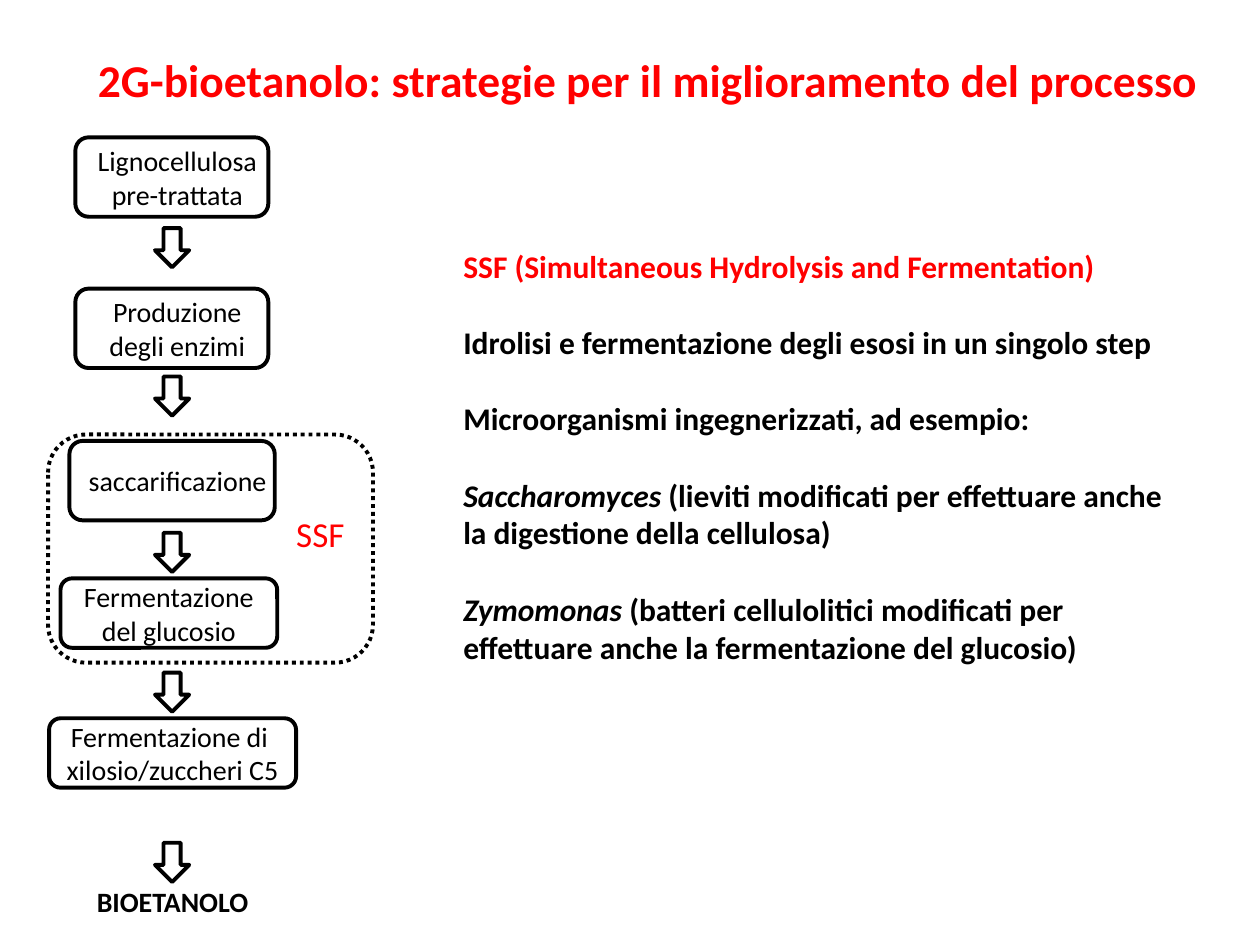
from pptx import Presentation
from pptx.util import Cm, Pt
from pptx.dml.color import RGBColor as RGB
from pptx.enum.dml import MSO_LINE as Dash
from pptx.enum.shapes import MSO_SHAPE as Kind
from pptx.enum.text import MSO_ANCHOR as Anchor, PP_ALIGN as Align

HUES = {"ink": "000000", "red": "FF0000", "paper": "FFFFFF"}
FONT = "Calibri"
AXIS = 3.47

STEPS = [
    ("Lignocellulosa\npre-trattata", 1.52, 2.77, 3.89, 1.6, 0.03),
    ("Produzione degli enzimi", 1.52, 5.82, 3.89, 1.6, 0.03),
    ("saccarificazione", 1.4, 8.89, 4.14, 1.6, 0.03),
    ("Fermentazione del glucosio", 1.22, 11.66, 4.37, 1.4, 0.25),
    ("Fermentazione di \nxilosio/zuccheri C5", 0.99, 14.48, 4.98, 1.4, 0.25),
]
ARROWS = [4.6, 7.59, 10.74, 13.56, 16.99]
NOTES = [
    ("", "SSF (Simultaneous Hydrolysis and Fermentation)", "red", Align.JUSTIFY),
    ("", "Idrolisi e fermentazione degli esosi in un singolo step", "ink", Align.JUSTIFY),
    ("", "Microorganismi ingegnerizzati, ad esempio:", "ink", Align.LEFT),
    ("Saccharomyces ", "(lieviti modificati per effettuare anche "
     "la digestione della cellulosa)", "ink", Align.LEFT),
    ("Zymomonas ", "(batteri cellulolitici modificati per "
     "effettuare anche la fermentazione del glucosio)", "ink", Align.LEFT),
]


def hue(name):
    return RGB.from_string(HUES[name])


def style(para, size, color="ink", bold=False, align=Align.CENTER):
    para.alignment = align
    font = para.font
    font.name, font.size, font.bold = FONT, Pt(size), bold
    font.color.rgb = hue(color)


def add_form(slide, kind, left, top, width, height, fill=None):
    form = slide.shapes.add_shape(kind, Cm(left), Cm(top), Cm(width), Cm(height))
    form.shadow.inherit = False
    if fill:
        form.fill.solid()
        form.fill.fore_color.rgb = hue(fill)
    else:
        form.fill.background()
    form.line.color.rgb = hue("ink")
    form.line.width = Pt(2.25)
    return form


def add_step(slide, text, left, top, width, height, right):
    frame = add_form(slide, Kind.ROUNDED_RECTANGLE, left, top, width, height).text_frame
    frame.word_wrap = True
    frame.vertical_anchor = Anchor.MIDDLE
    frame.margin_left, frame.margin_right = Cm(0.25), Cm(right)
    frame.margin_top = frame.margin_bottom = Cm(0.03)
    frame.text = text
    for para in frame.paragraphs:
        style(para, 16)


def add_arrow(slide, top):
    width = 0.69
    add_form(slide, Kind.DOWN_ARROW, AXIS - width / 2, top, width, 0.79, "paper")


def add_box(slide, left, top, width, height):
    box = slide.shapes.add_textbox(Cm(left), Cm(top), Cm(width), Cm(height))
    box.text_frame.word_wrap = True
    return box.text_frame


def add_label(slide, text, area, size, color="ink", bold=False):
    frame = add_box(slide, *area)
    frame.vertical_anchor = Anchor.MIDDLE
    frame.text = text
    style(frame.paragraphs[0], size, color, bold)


def add_notes(slide):
    frame = add_box(slide, 9.09, 4.85, 15.14, 8.71)
    for rank, (genus, text, color, align) in enumerate(NOTES):
        para = frame.add_paragraph() if rank else frame.paragraphs[0]
        style(para, 18, color, True, align)
        if rank:
            para.space_before = Pt(22)
        if genus:
            run = para.add_run()
            run.text = genus
            run.font.italic = True
        para.add_run().text = text


def main():
    deck = Presentation()
    deck.slide_width, deck.slide_height = Cm(25.4), Cm(19.05)
    slide = deck.slides.add_slide(deck.slide_layouts[6])
    add_label(slide, "2G-bioetanolo: strategie per il miglioramento del processo",
              (0.99, 0.91, 24.16, 1.37), 26, "red", True)
    for step in STEPS:
        add_step(slide, *step)
    for top in ARROWS:
        add_arrow(slide, top)
    add_label(slide, "BIOETANOLO", (1.27, 17.58, 4.42, 1.19), 16, bold=True)
    group = add_form(slide, Kind.ROUNDED_RECTANGLE, 0.97, 8.76, 6.55, 4.6)
    group.line.dash_style = Dash.ROUND_DOT
    add_label(slide, "SSF", (5.61, 10.19, 1.7, 1.12), 20, "red")
    add_notes(slide)
    deck.save("out.pptx")


if __name__ == "__main__":
    main()
